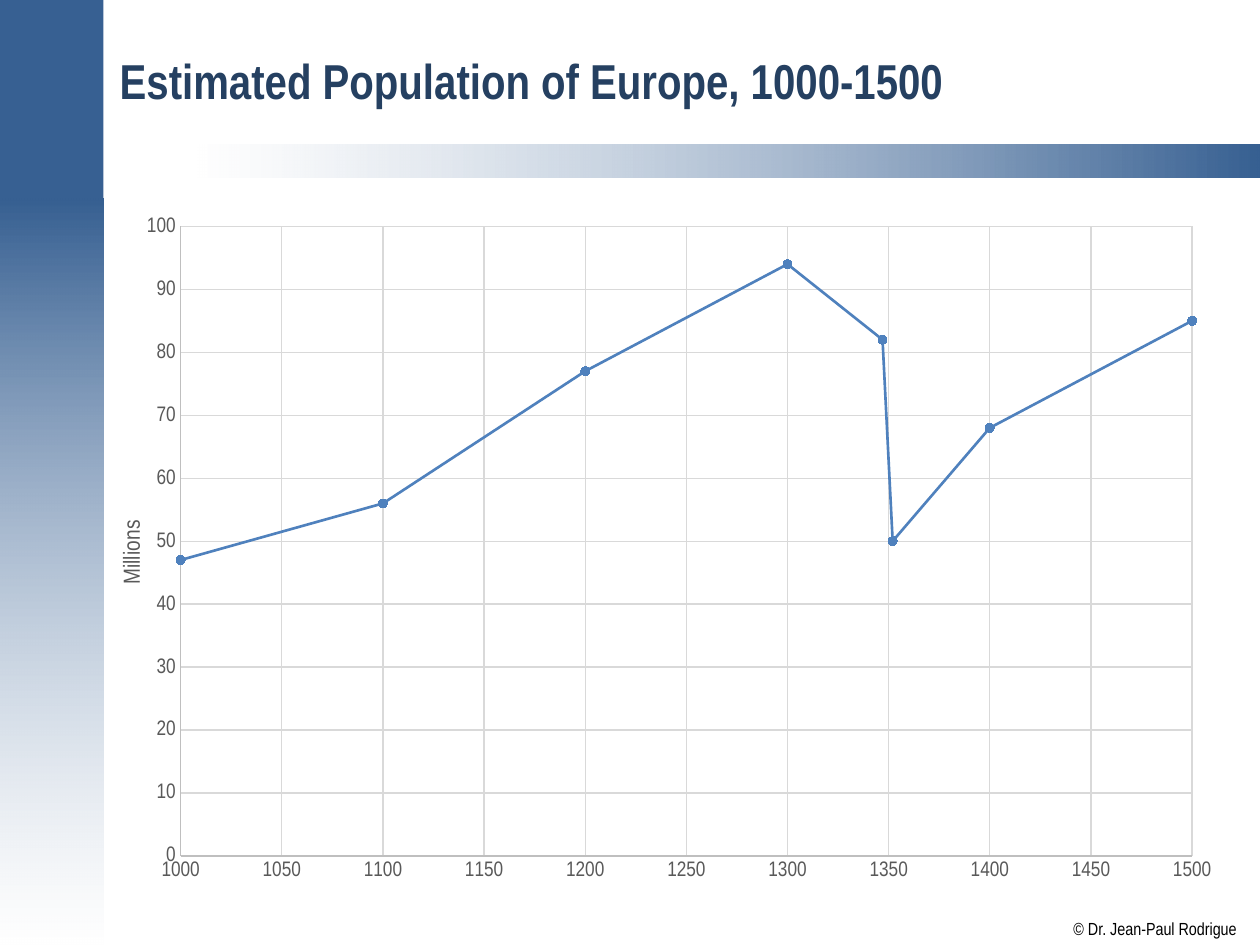
from dataclasses import dataclass

from lxml import etree
from pptx import Presentation
from pptx import util as u
from pptx.chart.data import XyChartData
from pptx.dml.color import RGBColor
from pptx.enum import chart as charts, shapes, text
from pptx.oxml import parse_xml
from pptx.oxml.ns import nsdecls, qn


@dataclass(frozen=True)
class Theme:
    font: str = "Arial Narrow"
    band: str = "376092"
    fade: str = "FFFFFF"
    title: str = "254061"
    ink: str = "000000"
    label: str = "595959"
    axis: str = "BFBFBF"
    grid: str = "D9D9D9"
    series: str = "4F81BD"
    title_size: float = 28
    axis_title_size: float = 13.3
    label_size: float = 12
    credit_size: float = 10


POPULATION = [
    (1000, 47), (1100, 56), (1200, 77), (1300, 94),
    (1347, 82), (1352, 50), (1400, 68), (1500, 85),
]


class SlideBuilder:
    def __init__(self, presentation, theme):
        self.theme = theme
        self.width = presentation.slide_width
        self.height = presentation.slide_height
        self.slide = presentation.slides.add_slide(presentation.slide_layouts[5])

    def box(self, left, top, width, height):
        return (round(left * self.width), round(top * self.height),
                round(width * self.width), round(height * self.height))

    def style(self, font, size, color, bold=False):
        font.name = self.theme.font
        font.size = u.Pt(size)
        font.bold = bold
        font.color.rgb = RGBColor.from_string(color)

    def line(self, line, color, width):
        line.color.rgb = RGBColor.from_string(color)
        line.width = u.Pt(width)

    def title(self, words, *area):
        shape = self.slide.shapes.title
        shape.left, shape.top, shape.width, shape.height = self.box(*area)
        frame = shape.text_frame
        frame.text = words
        frame.word_wrap = True
        frame.auto_size = text.MSO_AUTO_SIZE.NONE
        frame.vertical_anchor = text.MSO_ANCHOR.MIDDLE
        paragraph = frame.paragraphs[0]
        paragraph.alignment = text.PP_ALIGN.LEFT
        self.style(paragraph.runs[0].font, self.theme.title_size, self.theme.title, True)

    def band(self, *area, colors=None, angle=0, opacity=50):
        shape = self.slide.shapes.add_shape(shapes.MSO_SHAPE.RECTANGLE, *self.box(*area))
        shape.shadow.inherit = False
        shape.line.fill.background()
        if colors is None:
            shape.fill.solid()
            shape.fill.fore_color.rgb = RGBColor.from_string(self.theme.band)
            return
        shape.fill.gradient()
        shape.fill.gradient_angle = angle
        for stop, color, position in zip(shape.fill.gradient_stops, colors, (0, 1)):
            stop.color.rgb = RGBColor.from_string(color)
            stop.position = position
        for color in shape.fill._xPr.iter(qn("a:srgbClr")):
            if color.get("val") == self.theme.fade:
                etree.SubElement(color, qn("a:alpha")).set("val", str(opacity * 1000))

    def credit(self, words, *area):
        frame = self.slide.shapes.add_textbox(*self.box(*area)).text_frame
        frame.margin_left = frame.margin_right = frame.margin_top = frame.margin_bottom = 0
        frame.word_wrap = False
        frame.auto_size = text.MSO_AUTO_SIZE.SHAPE_TO_FIT_TEXT
        frame.text = words
        self.style(frame.paragraphs[0].runs[0].font, self.theme.credit_size, self.theme.ink)

    def layout(self, x, y, width=None, height=None):
        values = {"xMode": "edge", "yMode": "edge", "x": x, "y": y}
        if width is not None:
            values = {"layoutTarget": "inner", **values, "w": width, "h": height}
        parts = "".join(f'<c:{name} val="{value}"/>' for name, value in values.items())
        return parse_xml(f'<c:layout {nsdecls("c")}><c:manualLayout>{parts}'
                         '</c:manualLayout></c:layout>')

    def axis(self, axis, low, high, step):
        axis.minimum_scale, axis.maximum_scale, axis.major_unit = low, high, step
        axis.major_tick_mark = axis.minor_tick_mark = charts.XL_TICK_MARK.NONE
        axis.has_major_gridlines = True
        self.line(axis.major_gridlines.format.line, self.theme.grid, 0.75)
        self.line(axis.format.line, self.theme.axis, 0.75)
        self.style(axis.tick_labels.font, self.theme.label_size, self.theme.label)
        axis.tick_labels.number_format = "General"
        axis.tick_labels.number_format_is_linked = False

    def axis_title(self, axis, words, x, y):
        title = axis.axis_title
        title.text_frame.text = words
        self.style(title.text_frame.paragraphs[0].runs[0].font,
                   self.theme.axis_title_size, self.theme.label)
        body = title.text_frame._txBody.find(qn("a:bodyPr"))
        body.set("rot", "-5400000")
        body.set("vert", "horz")
        element = title._element
        for previous in element.findall(qn("c:layout")):
            element.remove(previous)
        element.find(qn("c:tx")).addnext(self.layout(x, y))

    def scatter(self, points, *area):
        data = XyChartData()
        series_data = data.add_series("Series 1")
        for year, millions in points:
            series_data.add_data_point(year, millions)
        chart = self.slide.shapes.add_chart(
            charts.XL_CHART_TYPE.XY_SCATTER_LINES, *self.box(*area), data).chart
        chart.has_legend = chart.has_title = False
        self.style(chart.font, self.theme.credit_size, self.theme.ink)
        self.axis(chart.category_axis, 1000, 1500, 50)
        self.axis(chart.value_axis, 0, 100, 10)
        self.axis_title(chart.value_axis, "Millions", 0.01, 0.46)

        plot = chart.plots[0]
        plot.vary_by_categories = False
        series = plot.series[0]
        series.smooth = False
        self.line(series.format.line, self.theme.series, 1.5)
        marker = series.marker
        marker.style, marker.size = charts.XL_MARKER_STYLE.CIRCLE, 5
        marker.format.fill.solid()
        marker.format.fill.fore_color.rgb = RGBColor.from_string(self.theme.series)
        self.line(marker.format.line, self.theme.series, 0.75)

        plot_area = chart._chartSpace.chart.plotArea
        for previous in plot_area.findall(qn("c:layout")):
            plot_area.remove(previous)
        plot_area.insert(0, self.layout(0.067, 0.063, 0.89, 0.863))


def main():
    presentation = Presentation()
    presentation.slide_width, presentation.slide_height = u.Inches(10), u.Inches(7.5)
    theme = Theme()
    builder = SlideBuilder(presentation, theme)
    side, split = 0.082, 0.21
    builder.band(0, split, side, 1 - split, colors=(theme.band, theme.fade), angle=270)
    builder.band(0.157, 0.153, 0.843, 0.035, colors=(theme.fade, theme.band))
    builder.band(0, 0, side, split)
    builder.credit("© Dr. Jean-Paul Rodrigue", 0.852, 0.971, 0.13, 0.023)
    builder.title("Estimated Population of Europe, 1000-1500", 0.085, 0.015, 0.898, 0.139)
    builder.scatter(POPULATION, 0.083, 0.191, 0.902, 0.772)
    presentation.save("out.pptx")


if __name__ == "__main__":
    main()
